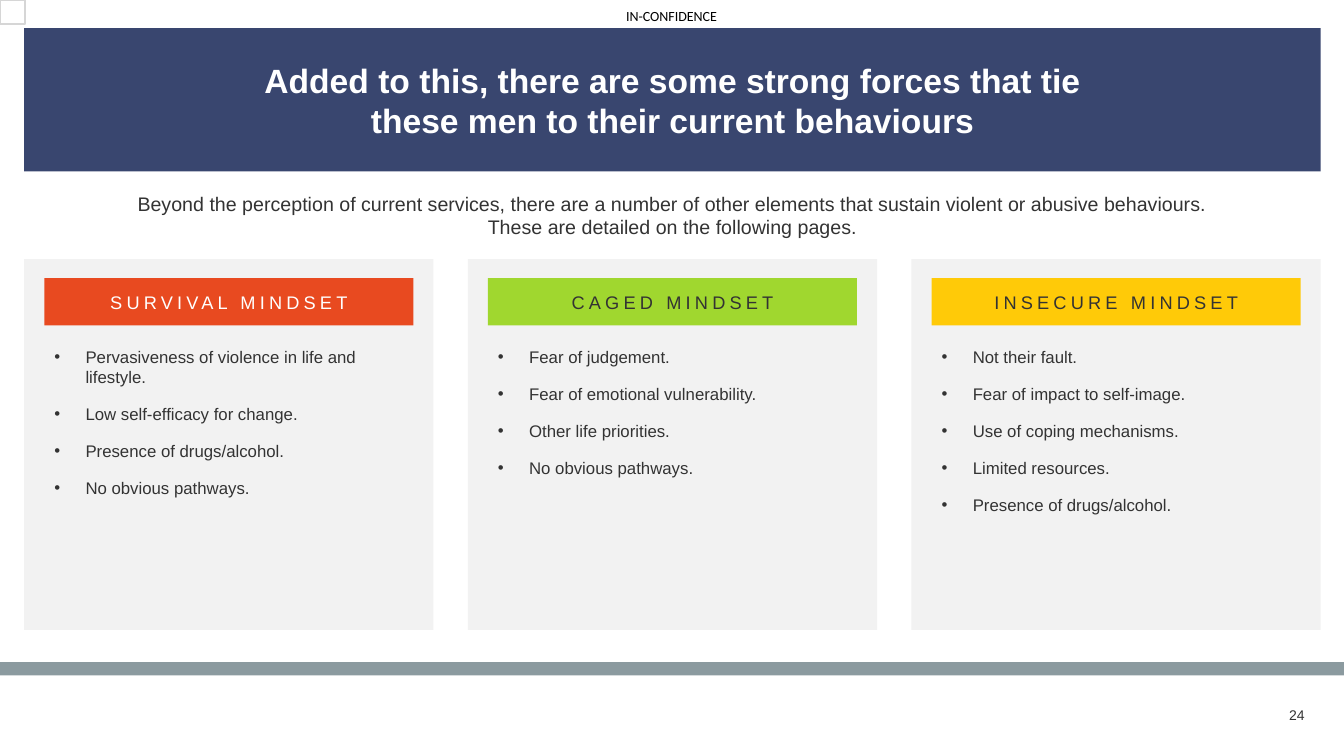
"""Build the slide on the three mindsets that tie men to their current behaviours."""
import dataclasses

import pptx
import pptx.dml.color
import pptx.enum.shapes
import pptx.enum.text
import pptx.oxml.ns
import pptx.util
from lxml import etree
from pptx.util import Inches

ALIGN = pptx.enum.text.PP_ALIGN
ANCHOR = pptx.enum.text.MSO_ANCHOR


@dataclasses.dataclass(frozen=True)
class Theme:
    navy: str = "39466F"
    panel: str = "F2F2F2"
    orange: str = "E84A20"
    green: str = "A0D72F"
    yellow: str = "FFCA08"
    band: str = "8B9A9F"
    outline: str = "D6D6D6"
    ink: str = "333333"
    white: str = "FFFFFF"
    black: str = "000000"
    title_size: int = 24
    intro_size: int = 14
    heading_size: int = 13
    body_size: int = 12
    small_size: int = 10


theme = Theme()
rgb = pptx.dml.color.RGBColor.from_string

deck = pptx.Presentation()
deck.slide_width, deck.slide_height = Inches(13.33), Inches(7.5)
slide = deck.slides.add_slide(deck.slide_layouts[6])


def add_block(left, top, width, height, fill, line=None):
    """Add a flat rectangle."""
    block = slide.shapes.add_shape(
        pptx.enum.shapes.MSO_SHAPE.RECTANGLE,
        Inches(left), Inches(top), Inches(width), Inches(height))
    block.shadow.inherit = False
    block.fill.solid()
    block.fill.fore_color.rgb = rgb(fill)
    if line:
        block.line.color.rgb = rgb(line)
        block.line.width = pptx.util.Pt(1)
    else:
        block.line.fill.background()
    return block


def write(holder, *lines, size, color=theme.ink, font="Arial", bold=False, align=ALIGN.LEFT,
          anchor=ANCHOR.TOP, spacing=0, bullets=False, inset=True, wrap=True):
    """Fill a shape or text box with formatted paragraphs."""
    frame = holder.text_frame
    frame.word_wrap = wrap
    frame.vertical_anchor = anchor
    if not inset:
        frame.margin_left = frame.margin_right = frame.margin_top = frame.margin_bottom = 0
    for index, line in enumerate(lines):
        paragraph = frame.paragraphs[0] if index == 0 else frame.add_paragraph()
        paragraph.text = line
        paragraph.alignment = align
        if bullets:
            properties = paragraph._p.get_or_add_pPr()
            properties.set("marL", str(Inches(0.31)))
            properties.set("indent", str(Inches(-0.31)))
            etree.SubElement(properties, pptx.oxml.ns.qn("a:buFont")).set("typeface", "Arial")
            etree.SubElement(properties, pptx.oxml.ns.qn("a:buChar")).set("char", "•")
            if index:
                paragraph.space_before = pptx.util.Pt(12)
        for run in paragraph.runs:
            run.font.name = font
            run.font.size = pptx.util.Pt(size)
            run.font.bold = bold
            run.font.color.rgb = rgb(color)
            if spacing:
                run.font._element.set("spc", str(spacing * 100))


page_number = slide.shapes.add_textbox(Inches(12.56), Inches(6.99), Inches(0.38), Inches(0.21))
write(page_number, "24", size=theme.small_size, align=ALIGN.RIGHT, anchor=ANCHOR.MIDDLE,
      inset=False)

add_block(0, 6.57, 13.33, 0.13, theme.band)

classification = slide.shapes.add_textbox(Inches(6.21), Inches(0.07), Inches(0.94), Inches(0.17))
write(classification, "IN-CONFIDENCE", size=theme.small_size, color=theme.black, font="Calibri",
      inset=False, wrap=False)

title = add_block(0.24, 0.28, 12.86, 1.42, theme.navy)
write(title, "Added to this, there are some strong forces that tie\vthese men to their current behaviours",
      size=theme.title_size, color=theme.white, bold=True, align=ALIGN.CENTER,
      anchor=ANCHOR.MIDDLE)

mindsets = [
    ("SURVIVAL MINDSET", theme.orange, theme.white,
     ["Pervasiveness of violence in life and lifestyle.", "Low self-efficacy for change.",
      "Presence of drugs/alcohol.", "No obvious pathways."]),
    ("CAGED MINDSET", theme.green, theme.ink,
     ["Fear of judgement.", "Fear of emotional vulnerability.", "Other life priorities.",
      "No obvious pathways."]),
    ("INSECURE MINDSET", theme.yellow, theme.ink,
     ["Not their fault.", "Fear of impact to self-image.", "Use of coping mechanisms.",
      "Limited resources.", "Presence of drugs/alcohol."]),
]
for column, (mindset, fill, color, forces) in enumerate(mindsets):
    left = 0.24 + 4.4 * column
    add_block(left, 2.57, 4.06, 3.68, theme.panel)
    heading = add_block(left + 0.2, 2.76, 3.66, 0.47, fill)
    write(heading, mindset, size=theme.heading_size, color=color, align=ALIGN.CENTER,
          anchor=ANCHOR.MIDDLE, spacing=3)
    force_list = slide.shapes.add_textbox(
        Inches(left + 0.2), Inches(3.39), Inches(3.66), Inches(2.67))
    write(force_list, *forces, size=theme.body_size, bullets=True)

intro = slide.shapes.add_textbox(Inches(0.24), Inches(1.85), Inches(12.86), Inches(0.57))
write(intro, "Beyond the perception of current services, there are a number of other elements "
      "that sustain violent or abusive behaviours.\vThese are detailed on the following pages.",
      size=theme.intro_size, align=ALIGN.CENTER)

add_block(0, 0, 0.25, 0.24, theme.white, line=theme.outline)

deck.save("out.pptx")
